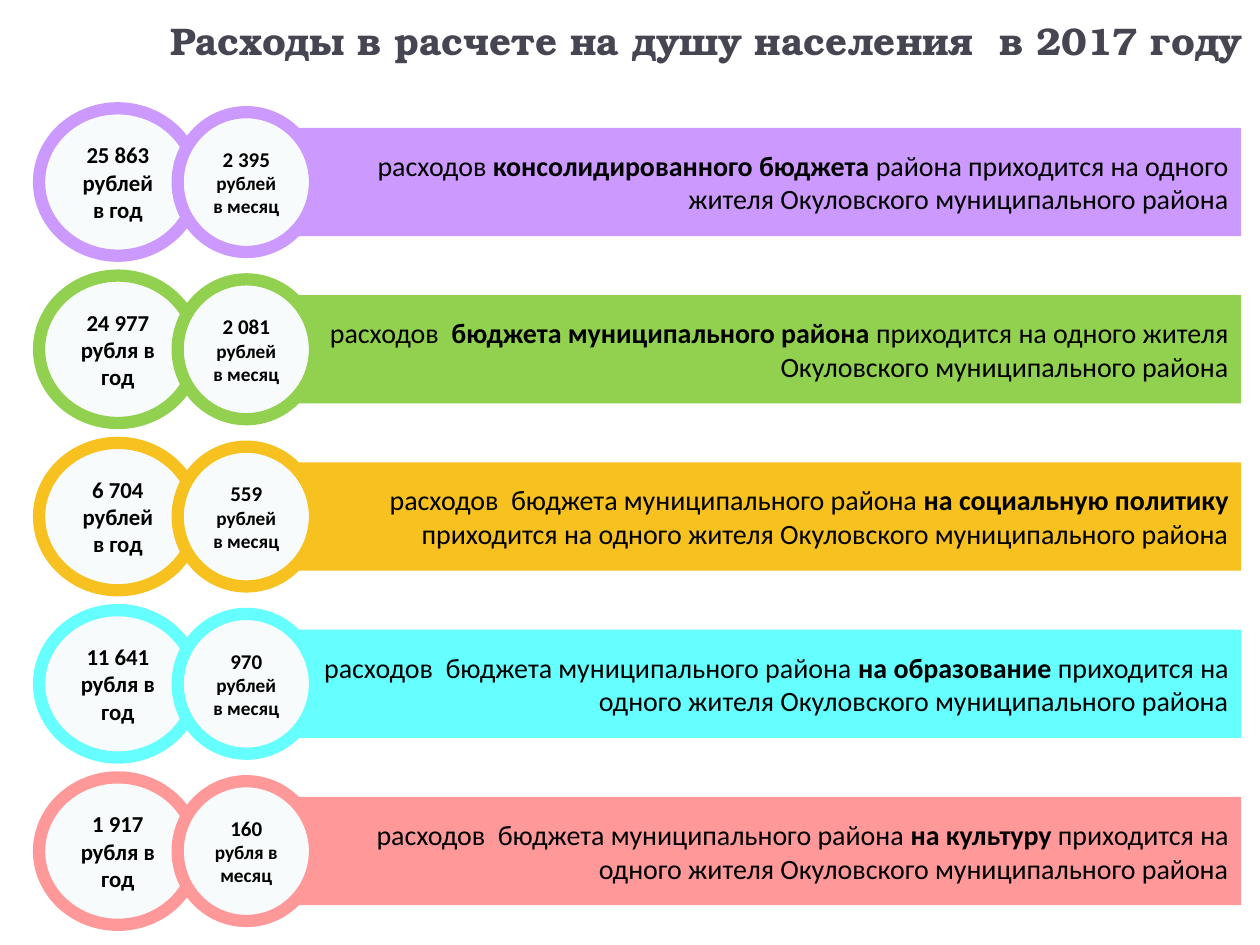
from pptx import Presentation
from pptx.dml.color import RGBColor
from pptx.enum.shapes import MSO_SHAPE
from pptx.enum.text import MSO_ANCHOR, PP_ALIGN
from pptx.util import Inches, Pt

COLORS = {
    "title": "464653", "text": "000000", "disc": "F8FBFB",
    "violet": "CC99FF", "green": "92D050", "amber": "F7C120",
    "cyan": "66FFFF", "coral": "FF9999",
}
TITLE = "Расходы в расчете на душу населения  в 2017 году"
DISTRICT = "расходов  бюджета муниципального района "
TAIL = "приходится на одного жителя Окуловского муниципального района"
ROWS = [
    ("violet", "25 863 рублей в год", "2 395 ", "рублей в месяц", 2.27,
     ("расходов ", "консолидированного бюджета ", "района " + TAIL)),
    ("green", "24 977 рубля в год", "2 081 ", "рублей в месяц", 2.34,
     ("расходов  ", "бюджета муниципального района ", TAIL)),
    ("amber", "6 704 рублей в год", "559 ", "рублей в месяц", 2.34,
     (DISTRICT, "на социальную политику ", TAIL)),
    ("cyan", "11 641 рубля в год", "970 ", "рублей в месяц", 2.34,
     (DISTRICT, "на образование ", TAIL)),
    ("coral", "1 917 рубля в год", "160 ", "рубля в месяц", 2.27,
     (DISTRICT, "на культуру ", TAIL)),
]
TOP, PITCH, ROW_H = 0.86, 1.3275, 1.17
BAR_RIGHT = 9.85


def rgb(name):
    """Return the named colour."""
    return RGBColor.from_string(COLORS[name])


def add_runs(p, runs, font="Calibri", color="text"):
    """Append (text, size, bold) runs to a paragraph."""
    for text, size, bold in runs:
        r = p.add_run()
        r.text = text
        r.font.name, r.font.size, r.font.bold = font, Pt(size), bold
        r.font.color.rgb = rgb(color)


def add_block(s, kind, left, mid, width, height, fill, runs, align, line=None):
    """Draw a filled shape with text, centred vertically on mid."""
    sp = s.shapes.add_shape(kind, Inches(left), Inches(mid - height / 2),
                            Inches(width), Inches(height))
    sp.shadow.inherit = False
    sp.fill.solid()
    sp.fill.fore_color.rgb = rgb(fill)
    if line:
        sp.line.color.rgb = rgb(line)
        sp.line.width = Pt(7)
    else:
        sp.line.fill.background()
    tf = sp.text_frame
    tf.word_wrap = True
    tf.vertical_anchor = MSO_ANCHOR.MIDDLE
    p = tf.paragraphs[0]
    p.alignment = align
    add_runs(p, runs)


def add_row(s, top, color, yearly, amount, unit, bar_left, words):
    """Draw one spending row: yearly disc, description bar, monthly disc."""
    mid = top + ROW_H / 2
    add_block(s, MSO_SHAPE.OVAL, 0.31, mid, 1.25, ROW_H, "disc",
              [(yearly, 13, True)], PP_ALIGN.CENTER, color)
    before, strong, after = words
    add_block(s, MSO_SHAPE.RECTANGLE, bar_left, mid, BAR_RIGHT - bar_left, 0.86, color,
              [(before, 16, False), (strong, 16, True), (after, 16, False)],
              PP_ALIGN.RIGHT)
    add_block(s, MSO_SHAPE.OVAL, 1.41, mid, 1.09, 1.11, "disc",
              [(amount, 12, True), (unit, 11, True)], PP_ALIGN.CENTER, color)


def add_title(s, left, top, width, height):
    """Place the slide title in its placeholder."""
    sp = s.shapes.title
    sp.left, sp.top = Inches(left), Inches(top)
    sp.width, sp.height = Inches(width), Inches(height)
    tf = sp.text_frame
    tf.word_wrap = True
    tf.vertical_anchor = MSO_ANCHOR.BOTTOM
    p = tf.paragraphs[0]
    p.alignment = PP_ALIGN.LEFT
    add_runs(p, [(TITLE, 22, True)], "TeX Gyre Bonum", "title")


def main():
    """Build the slide and save it."""
    prs = Presentation()
    prs.slide_width, prs.slide_height = Inches(10), Inches(7.5)
    s = prs.slides.add_slide(prs.slide_layouts[5])
    add_title(s, 1.25, 0, 8.75, 0.55)
    for i, row in enumerate(ROWS):
        add_row(s, TOP + i * PITCH, *row)
    prs.save("out.pptx")


if __name__ == "__main__":
    main()
